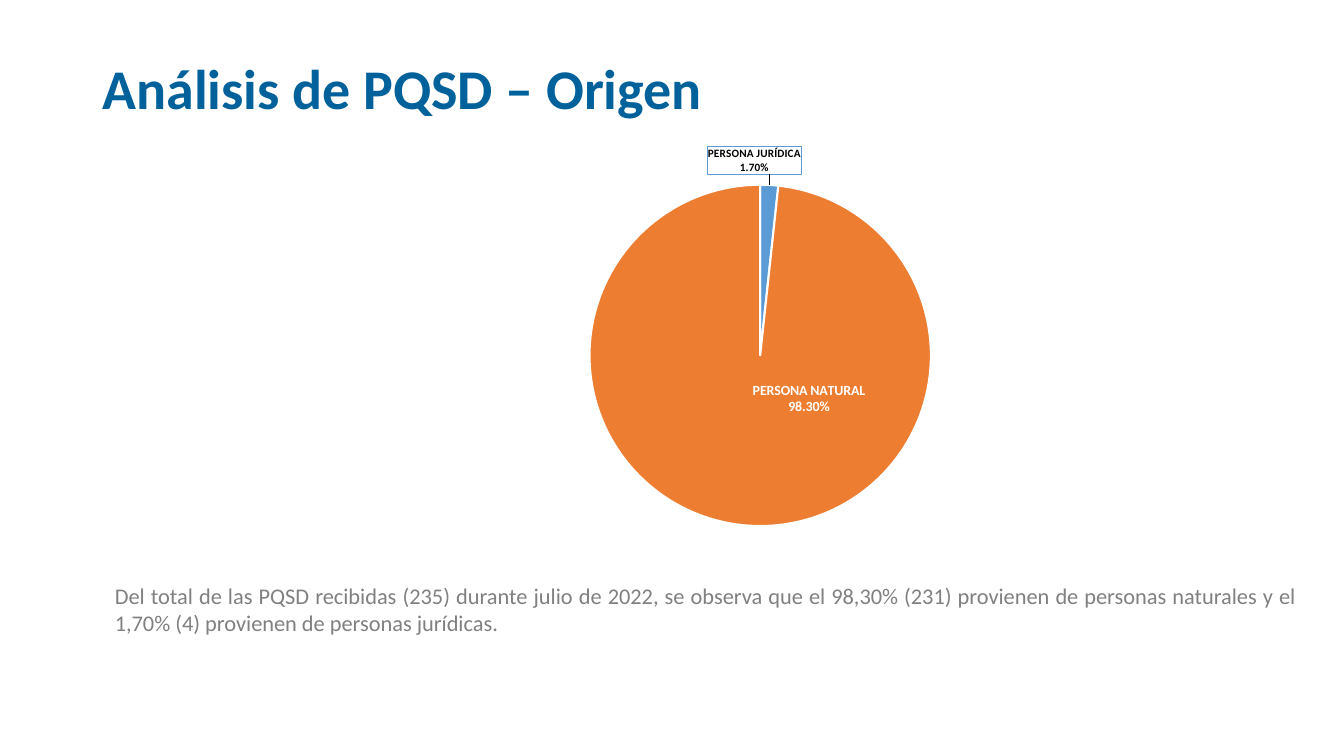
from lxml import etree
from pptx import Presentation, util as u
from pptx.chart.data import CategoryChartData
from pptx.dml.color import RGBColor
from pptx.enum import chart as ch, text
from pptx.oxml import parse_xml
from pptx.oxml.ns import nsdecls

FONT = "Calibri"
TITLE_BLUE = RGBColor(0x01, 0x61, 0x9B)
GRAY = RGBColor(0x80, 0x80, 0x80)
BLACK = RGBColor(0, 0, 0)
WHITE = RGBColor(0xFF, 0xFF, 0xFF)
BLUE = RGBColor(0x5B, 0x9B, 0xD5)
ORANGE = RGBColor(0xED, 0x7D, 0x31)

# name, share, fill, label size, label colour, label place, label shift, boxed
ORIGINS = [
    ("PERSONA JURÍDICA", 1.7, BLUE, 8, BLACK, "outEnd", (-0.02, -0.01), True),
    ("PERSONA NATURAL", 98.3, ORANGE, 10, WHITE, "ctr", (0.07, -0.1), False),
]


def add_text(s, box, words, size, color, bold=False, align=None,
             anchor=text.MSO_ANCHOR.TOP, spacing=None):
    sp = s.shapes.add_textbox(*(u.Inches(v) for v in box))
    tf = sp.text_frame
    tf.word_wrap = True
    tf.vertical_anchor = anchor
    p = tf.paragraphs[0]
    p.alignment = align
    p.line_spacing = spacing
    r = p.add_run()
    r.text = words
    r.font.name, r.font.size, r.font.bold = FONT, u.Pt(size), bold
    r.font.color.rgb = color


def label_xml(i, size, color, place, shift, boxed):
    box = (f'<c:spPr><a:solidFill><a:srgbClr val="{WHITE}"/></a:solidFill>'
           f'<a:ln w="9525"><a:solidFill><a:srgbClr val="{BLUE}"/></a:solidFill></a:ln></c:spPr>'
           if boxed else "")
    return (f'<c:dLbl><c:idx val="{i}"/><c:layout><c:manualLayout>'
            f'<c:x val="{shift[0]}"/><c:y val="{shift[1]}"/></c:manualLayout></c:layout>'
            f'<c:numFmt formatCode="0.00%" sourceLinked="0"/>{box}'
            f'<c:txPr><a:bodyPr/><a:p><a:pPr><a:defRPr sz="{size * 100}" b="1">'
            f'<a:solidFill><a:srgbClr val="{color}"/></a:solidFill>'
            f'<a:latin typeface="{FONT}"/></a:defRPr></a:pPr></a:p></c:txPr>'
            f'<c:dLblPos val="{place}"/>{label_flags()}</c:dLbl>')


def label_flags():
    return ('<c:showLegendKey val="0"/><c:showVal val="0"/><c:showCatName val="1"/>'
            '<c:showSerName val="0"/><c:showPercent val="1"/><c:showBubbleSize val="0"/>'
            '<c:separator>\n</c:separator>')


def set_plot_area(chart, x, y, w, h):
    plot_area = chart.plots[0]._element.getparent()
    for old in plot_area.findall("{*}layout"):
        plot_area.remove(old)
    places = "".join(f'<c:{k} val="{v}"/>' for k, v in zip("xywh", (x, y, w, h)))
    plot_area.insert(0, parse_xml(
        f'<c:layout {nsdecls("c")}><c:manualLayout><c:layoutTarget val="inner"/>'
        f'<c:xMode val="edge"/><c:yMode val="edge"/>{places}</c:manualLayout></c:layout>'))


def add_pie(s, box):
    data = CategoryChartData()
    data.categories = [o[0] for o in ORIGINS]
    data.add_series("Series 1", [o[1] for o in ORIGINS])
    chart = s.shapes.add_chart(ch.XL_CHART_TYPE.PIE, *(u.Inches(v) for v in box), data).chart
    chart.has_legend = chart.has_title = False
    chart.font.name, chart.font.size = FONT, u.Pt(10)
    chart.font.color.rgb = BLACK
    chart.plots[0].vary_by_categories = True
    set_plot_area(chart, 0.33, 0.1, 0.45, 0.82)

    # Slices and their labels
    series = chart.plots[0].series[0]
    labels = ""
    for i, (_, _, fill, *label) in enumerate(ORIGINS):
        fmt = series.points[i].format
        fmt.fill.solid()
        fmt.fill.fore_color.rgb = fill
        fmt.line.color.rgb = WHITE
        fmt.line.width = u.Pt(1.5)
        labels += label_xml(i, *label)
    d_lbls = parse_xml(f'<c:dLbls {nsdecls("c", "a")}>{labels}'
                       f'<c:numFmt formatCode="0.00%" sourceLinked="0"/>{label_flags()}'
                       '<c:showLeaderLines val="1"/></c:dLbls>')
    ser = series._element
    ser.find(etree.QName(ser.nsmap["c"], "cat").text).addprevious(d_lbls)


def main():
    prs = Presentation()
    prs.slide_width, prs.slide_height = u.Inches(13.33), u.Inches(7.5)
    s = prs.slides.add_slide(prs.slide_layouts[6])

    # Heading
    add_text(s, (0.92, 0.36, 10.59, 1.09), "Análisis de PQSD – Origen", 40, TITLE_BLUE,
             bold=True, anchor=text.MSO_ANCHOR.MIDDLE, spacing=0.9)
    # Share of requests by origin
    add_pie(s, (3.35, 1.42, 7.55, 4.13))
    # Reading of the chart
    add_text(s, (1.04, 5.73, 11.92, 0.64),
             "Del total de las PQSD recibidas (235) durante julio de 2022, se observa que el "
             "98,30% (231) provienen de personas naturales y el 1,70% (4) provienen de "
             "personas jurídicas.", 16, GRAY, align=text.PP_ALIGN.JUSTIFY)
    prs.save("out.pptx")


if __name__ == "__main__":
    main()
